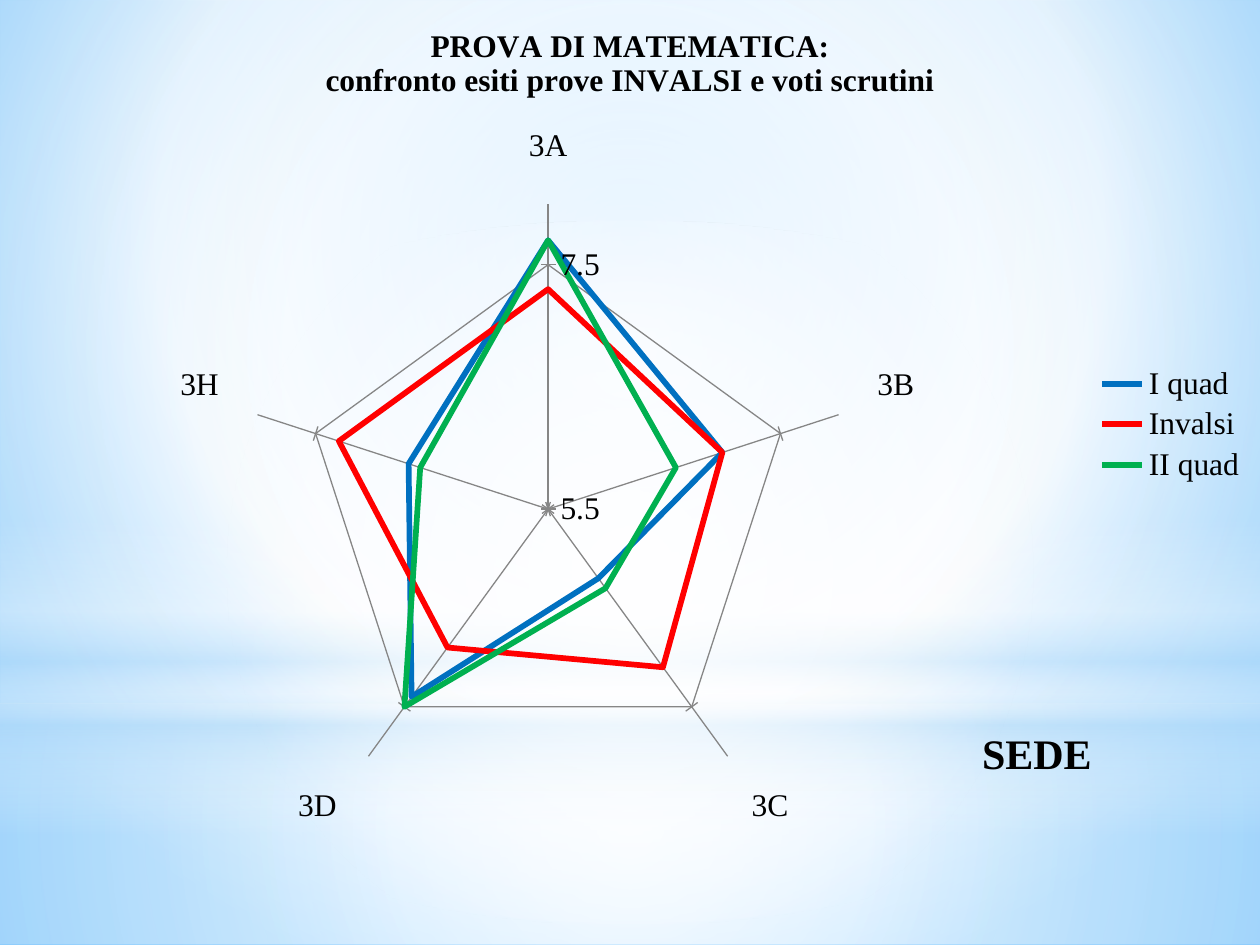
from lxml.etree import SubElement
from pptx import Presentation
from pptx.chart.data import CategoryChartData
from pptx.dml.color import RGBColor
from pptx.enum.chart import XL_CHART_TYPE as ChartType
from pptx.enum.chart import XL_LEGEND_POSITION as LegendPosition
from pptx.enum.chart import XL_TICK_MARK as TickMark
from pptx.enum.shapes import MSO_SHAPE as Preset
from pptx.enum.text import PP_ALIGN as Align
from pptx.oxml.ns import qn
from pptx.util import Pt

FONT = "Times New Roman"
BLACK = RGBColor(0x00, 0x00, 0x00)
WHITE = RGBColor(0xFF, 0xFF, 0xFF)
GRAY = RGBColor(0x86, 0x86, 0x86)
SKY = RGBColor(0x9E, 0xD5, 0xFF)
DEEP_SKY = RGBColor(0x5B, 0xB9, 0xFF)
MIST = RGBColor(0xB4, 0xDC, 0xFA)
BLUE = RGBColor(0x00, 0x70, 0xC0)
RED = RGBColor(0xFF, 0x00, 0x00)
GREEN = RGBColor(0x00, 0xB0, 0x50)

CENTRE = (50, 50, 50, 50)
CLASSES = ["3A", "3B", "3C", "3D ", "3H"]
MARKS = [
    ("I quad", BLUE, (7.7, 7, 6.2, 7.4, 6.7)),
    ("Invalsi", RED, (7.3, 7, 7.1, 6.9, 7.3)),
    ("II quad", GREEN, (7.7, 6.6, 6.3, 7.5, 6.6)),
]


def fill_gradient(owner, stops, focus=None):
    """Give owner a circular gradient around focus, or a vertical one without it."""
    old_fill = owner.find(qn("a:noFill"))
    gradient = SubElement(owner, qn("a:gradFill"), rotWithShape="1")
    owner.replace(old_fill, gradient)
    stop_list = SubElement(gradient, qn("a:gsLst"))
    for position, color, opacity in stops:
        stop = SubElement(stop_list, qn("a:gs"), pos=str(position * 1000))
        tone = SubElement(stop, qn("a:srgbClr"), val=str(color))
        if opacity < 100:
            SubElement(tone, qn("a:alpha"), val=str(opacity * 1000))
    if focus:
        circle = SubElement(gradient, qn("a:path"), path="circle")
        sides = {side: str(share * 1000) for side, share in zip("ltrb", focus)}
        SubElement(circle, qn("a:fillToRect"), **sides)
    else:
        SubElement(gradient, qn("a:lin"), ang="5400000", scaled="0")


def add_glow(slide, preset, left, top, width, height, stops, focus=None):
    """Add one outline-free gradient shape."""
    glow = slide.shapes.add_shape(preset, Pt(left), Pt(top), Pt(width), Pt(height))
    glow.shadow.inherit = False
    glow.line.fill.background()
    glow.fill.background()
    fill_gradient(glow.element.spPr, stops, focus)


def add_backdrop(slide, left, top, width, height):
    """Paint the background and its layers of light."""
    slide.background.fill.background()
    fill_gradient(slide.element.find(".//" + qn("p:bgPr")),
                  [(0, SKY, 100), (60, WHITE, 100), (100, DEEP_SKY, 100)],
                  (20, 10, 20, 60))
    horizon = 402
    add_glow(slide, Preset.RECTANGLE, left, top + horizon, width, height - horizon,
             [(0, WHITE, 91), (37, WHITE, 76), (100, MIST, 79)], CENTRE)
    add_glow(slide, Preset.RECTANGLE, left, top, width, horizon,
             [(0, WHITE, 89), (48, WHITE, 62), (100, MIST, 79)], CENTRE)
    add_glow(slide, Preset.RECTANGLE, left, top + 297, width, 180,
             [(0, WHITE, 0), (29, WHITE, 30), (45, MIST, 40), (55, WHITE, 26),
              (65, MIST, 60), (100, WHITE, 0)])
    add_glow(slide, Preset.OVAL, left, top + 126, width, horizon,
             [(0, WHITE, 100), (56, WHITE, 0)], CENTRE)


def set_font(font, size, bold=False):
    """Apply the slide's typeface in black."""
    font.name, font.size, font.bold = FONT, Pt(size), bold
    font.color.rgb = BLACK


def place_plot(chart, **shares):
    """Fix the inner plot area as shares of the chart's box."""
    plot_area = chart.element.find(".//" + qn("c:plotArea"))
    layout = plot_area.find(qn("c:layout"))
    if layout is None:
        layout = SubElement(plot_area, qn("c:layout"))
        plot_area.insert(0, layout)
    manual = SubElement(layout, qn("c:manualLayout"))
    settings = {"layoutTarget": "inner", "xMode": "edge", "yMode": "edge", **shares}
    for name, value in settings.items():
        SubElement(manual, qn("c:" + name), val=str(value))


def add_radar(slide, left, top, width, height):
    """Add the radar chart of marks by class, with its title and legend."""
    marks = CategoryChartData(number_format="General")
    marks.categories = CLASSES
    for name, _, values in MARKS:
        marks.add_series(name, values)
    chart = slide.shapes.add_chart(ChartType.RADAR, Pt(left), Pt(top),
                                   Pt(width), Pt(height), marks).chart
    set_font(chart.font, 10)
    chart.has_title = True
    heading = chart.chart_title.text_frame
    heading.text = "PROVA DI MATEMATICA:\nconfronto esiti prove INVALSI e voti scrutini"
    for line in heading.paragraphs:
        set_font(line.font, 18, bold=True)
    chart.chart_title.include_in_layout = False

    chart.has_legend = True
    chart.legend.position = LegendPosition.RIGHT
    chart.legend.include_in_layout = False
    set_font(chart.legend.font, 18)

    classes, scale = chart.category_axis, chart.value_axis
    for axis, tick in ((classes, TickMark.OUTSIDE), (scale, TickMark.CROSS)):
        axis.has_major_gridlines = True
        axis.major_gridlines.format.line.color.rgb = GRAY
        axis.format.line.color.rgb = GRAY
        axis.major_tick_mark = tick
        axis.minor_tick_mark = TickMark.NONE
        set_font(axis.tick_labels.font, 18)
    scale.minimum_scale, scale.maximum_scale, scale.major_unit = 5.5, 8, 2
    scale.tick_labels.number_format = "General"
    scale.tick_labels.number_format_is_linked = False

    plot = chart.plots[0]
    plot.vary_by_categories = False
    for series, (_, color, _) in zip(plot.series, MARKS):
        series.smooth = False
        series.format.line.color.rgb = color
        series.format.line.width = Pt(3.25)
    place_plot(chart, x=0.19, y=0.24, w=0.49, h=0.72)


def add_site_label(slide, left, top, width, height):
    """Name the school site beside the chart."""
    label = slide.shapes.add_textbox(Pt(left), Pt(top), Pt(width), Pt(height)).text_frame
    label.word_wrap = True
    site = label.paragraphs[0]
    site.text = "SEDE"
    site.alignment = Align.CENTER
    set_font(site.font, 24, bold=True)


def main():
    """Build the slide and save it."""
    deck = Presentation()
    deck.slide_width, deck.slide_height = Pt(720), Pt(540)
    slide = deck.slides.add_slide(deck.slide_layouts[6])
    add_backdrop(slide, 0, 0, 720, 540)
    add_site_label(slide, 496, 412, 193, 36)
    add_radar(slide, 0, 0, 720, 485)
    deck.save("out.pptx")


if __name__ == "__main__":
    main()
